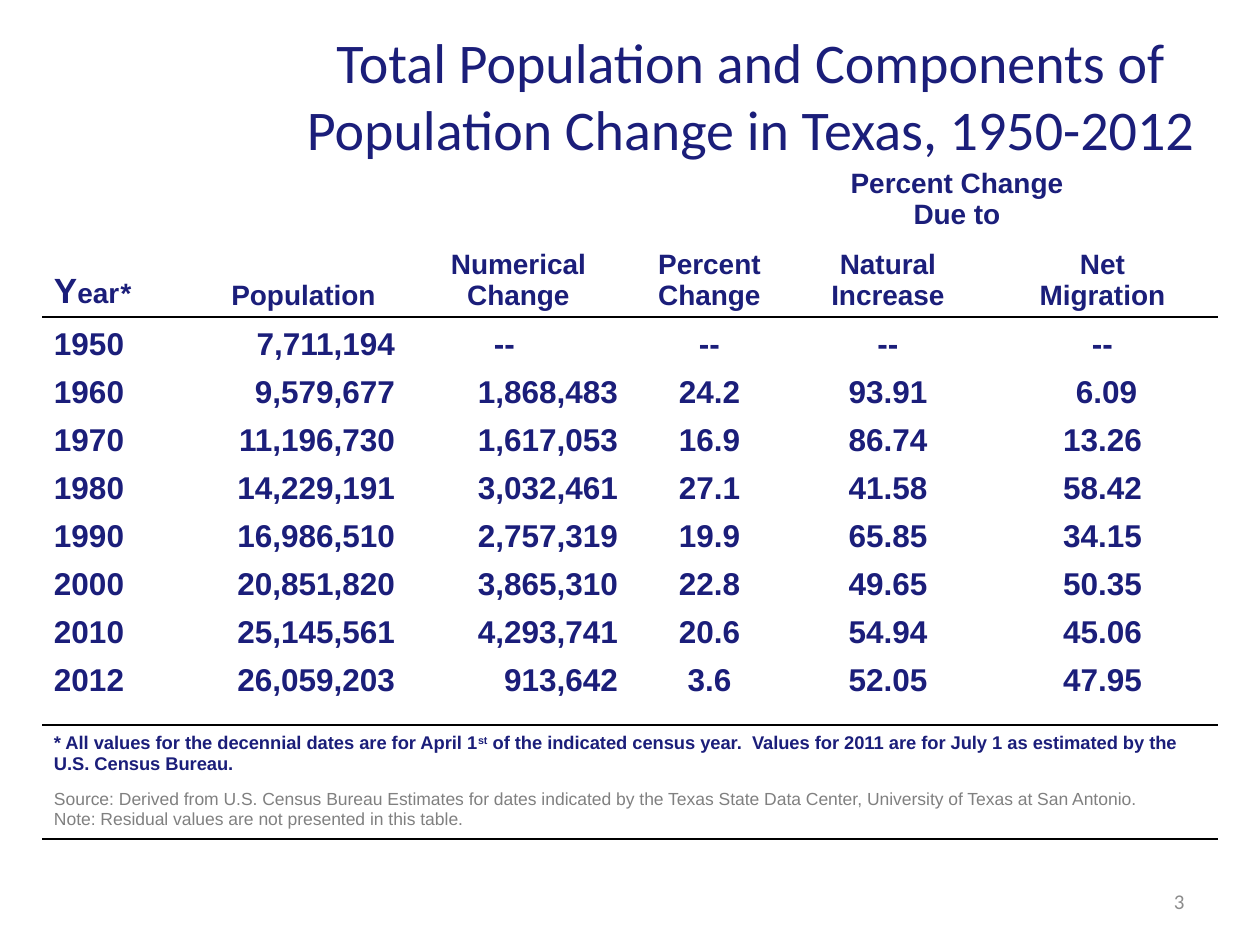
from lxml import etree
from pptx import Presentation
from pptx import util as u
from pptx.dml.color import RGBColor
from pptx.enum import text
from pptx.oxml import ns

PX = 914400 / 126
COLORS = {"navy": "1B1E7A", "grey": "808080", "number": "8C8C8C",
          "rule": "000000", "paper": "FFFFFF"}
LEFT, CENTER, RIGHT = text.PP_ALIGN.LEFT, text.PP_ALIGN.CENTER, text.PP_ALIGN.RIGHT
TOP, MIDDLE, BOTTOM = (text.MSO_ANCHOR.TOP, text.MSO_ANCHOR.MIDDLE,
                       text.MSO_ANCHOR.BOTTOM)
NO_GRID_STYLE = "{2D5ABB26-0587-4C30-8999-92F81FD0307C}"

COLUMNS = [142, 223, 223, 159, 198, 231]
ROWS = [83, 76, 51] + [48] * 7 + [21, 114]
# Rows with a rule below: headings, years and footnotes
RULED_ROWS = {1, 10, 11}
HEADERS = ["Population", "Numerical\nChange", "Percent\nChange",
           "Natural\nIncrease", "Net\nMigration"]
DATA = [
    ["1950", "7,711,194", "--", "--", "--", "--"],
    ["1960", "9,579,677", "1,868,483", "24.2", "93.91", "6.09"],
    ["1970", "11,196,730", "1,617,053", "16.9", "86.74", "13.26"],
    ["1980", "14,229,191", "3,032,461", "27.1", "41.58", "58.42"],
    ["1990", "16,986,510", "2,757,319", "19.9", "65.85", "34.15"],
    ["2000", "20,851,820", "3,865,310", "22.8", "49.65", "50.35"],
    ["2010", "25,145,561", "4,293,741", "20.6", "54.94", "45.06"],
    ["2012", "26,059,203", "913,642", "3.6", "52.05", "47.95"],
]
ALIGNS = [LEFT, RIGHT, RIGHT, CENTER, CENTER, CENTER]
# Cells that stand apart from their column: alignment and indent
OFFSETS = {(0, 2): (LEFT, 75), (1, 5): (CENTER, 8)}


def px(n):
    return u.Emu(round(n * PX))


class Deck:
    def __init__(self, width, height):
        self.prs = Presentation()
        self.prs.slide_width, self.prs.slide_height = px(width), px(height)
        self.s = self.prs.slides.add_slide(self.prs.slide_layouts[5])

    def run(self, p, words, size, color="navy", font="Arial", bold=True, italic=False):
        r = p.add_run()
        r.text = words
        f = r.font
        f.size, f.name, f.bold, f.italic = u.Pt(size), font, bold, italic
        f.color.rgb = RGBColor.from_string(COLORS[color])
        return r

    def frame(self, sp, box, anchor):
        sp.left, sp.top, sp.width, sp.height = map(px, box)
        tf = sp.text_frame
        tf.word_wrap = True
        tf.auto_size = text.MSO_AUTO_SIZE.NONE
        tf.vertical_anchor = anchor
        return tf.paragraphs[0]

    def title(self, box, words):
        sp = self.s.shapes.title
        p = self.frame(sp, box, TOP)
        p.alignment = CENTER
        self.run(p, words, 32, font="Calibri", bold=False)
        # Bring the title in front of the table
        self.s.shapes._spTree.append(sp._element)

    def label(self, box, words, size, color):
        p = self.frame(self.s.shapes.add_textbox(*map(px, box)), box, MIDDLE)
        p.alignment = RIGHT
        self.run(p, words, size, color, "Calibri", False)

    def table(self, left, top, columns, rows, ruled):
        table = self.s.shapes.add_table(len(rows), len(columns), px(left), px(top),
                                        px(sum(columns)), px(sum(rows))).table
        table.first_row = table.horz_banding = False
        table._tbl.tblPr.find(ns.qn("a:tableStyleId")).text = NO_GRID_STYLE
        for column, width in zip(table.columns, columns):
            column.width = px(width)
        for i, (row, height) in enumerate(zip(table.rows, rows)):
            row.height = px(height)
            for cell in row.cells:
                cell.margin_left = cell.margin_right = px(12)
                cell.margin_top, cell.margin_bottom = px(5), px(6)
                cell.vertical_anchor = BOTTOM
                self.border(cell, "a:lnT", i - 1 in ruled)
                self.border(cell, "a:lnB", i in ruled)
                if i:
                    cell.fill.solid()
                    cell.fill.fore_color.rgb = RGBColor.from_string(COLORS["paper"])
                else:
                    cell.fill.background()
        return table

    def border(self, cell, tag, drawn):
        pr = cell._tc.get_or_add_tcPr()
        ln = etree.SubElement(pr, ns.qn(tag), w=str(u.Pt(1.5) if drawn else 0))
        if drawn:
            fill = etree.SubElement(ln, ns.qn("a:solidFill"))
            etree.SubElement(fill, ns.qn("a:srgbClr"), val=COLORS["rule"])
        else:
            etree.SubElement(ln, ns.qn("a:noFill"))

    def cell(self, cell, words, size, align, indent=0):
        for i, line in enumerate(words.split("\n")):
            tf = cell.text_frame
            p = tf.add_paragraph() if i else tf.paragraphs[0]
            p.alignment = align
            if indent:
                p._p.get_or_add_pPr().set("marL", str(px(indent)))
            self.run(p, line, size)

    def spacer(self, table, row):
        for c in range(len(table.columns)):
            cell = table.cell(row, c)
            cell.margin_top = cell.margin_bottom = 0
            etree.SubElement(cell.text_frame.paragraphs[0]._p,
                             ns.qn("a:endParaRPr"), sz="600")


def main():
    d = Deck(1260, 945)
    table = d.table(42, 158, COLUMNS, ROWS, RULED_ROWS)

    # Heading over the last two columns
    top = table.cell(0, 0)
    top.merge(table.cell(0, 5))
    top.vertical_anchor = MIDDLE
    d.cell(top, "Percent Change\nDue to", 16, CENTER, 654)

    # Column headings
    p = table.cell(1, 0).text_frame.paragraphs[0]
    d.run(p, "Y", 20)
    d.run(p, "ear", 16)
    d.run(p, "*", 16, italic=True)
    for c, words in enumerate(HEADERS, 1):
        d.cell(table.cell(1, c), words, 16, CENTER, 16 if c == 1 else 0)

    # Census years
    for i, record in enumerate(DATA):
        for c, value in enumerate(record):
            align, indent = OFFSETS.get((i, c), (ALIGNS[c], 0))
            d.cell(table.cell(i + 2, c), value, 18, align, indent)

    # Footnotes
    d.spacer(table, 10)
    notes = table.cell(11, 0)
    notes.merge(table.cell(11, 5))
    notes.vertical_anchor = MIDDLE
    tf = notes.text_frame
    p = tf.paragraphs[0]
    d.run(p, "* All values for the decennial dates are for April 1", 10.5)
    d.run(p, "st", 10.5).font._element.set("baseline", "30000")
    d.run(p, " of the indicated census year.  Values for 2011 are for July 1 "
             "as estimated by the U.S. Census Bureau.", 10.5)
    for gap, words in (
            (9, "Source: Derived from U.S. Census Bureau Estimates for dates indicated "
                "by the Texas State Data Center, University of Texas at San Antonio."),
            (0, "Note: Residual values are not presented in this table.")):
        p = tf.add_paragraph()
        p.space_before = u.Pt(gap)
        d.run(p, words, 10, "grey", bold=False)

    # Title and slide number
    d.title((242, 21, 1018, 136),
            "Total Population and Components of Population Change in Texas, 1950-2012")
    d.label((903, 876, 294, 50), "3", 12, "number")
    d.prs.save("out.pptx")


if __name__ == "__main__":
    main()
